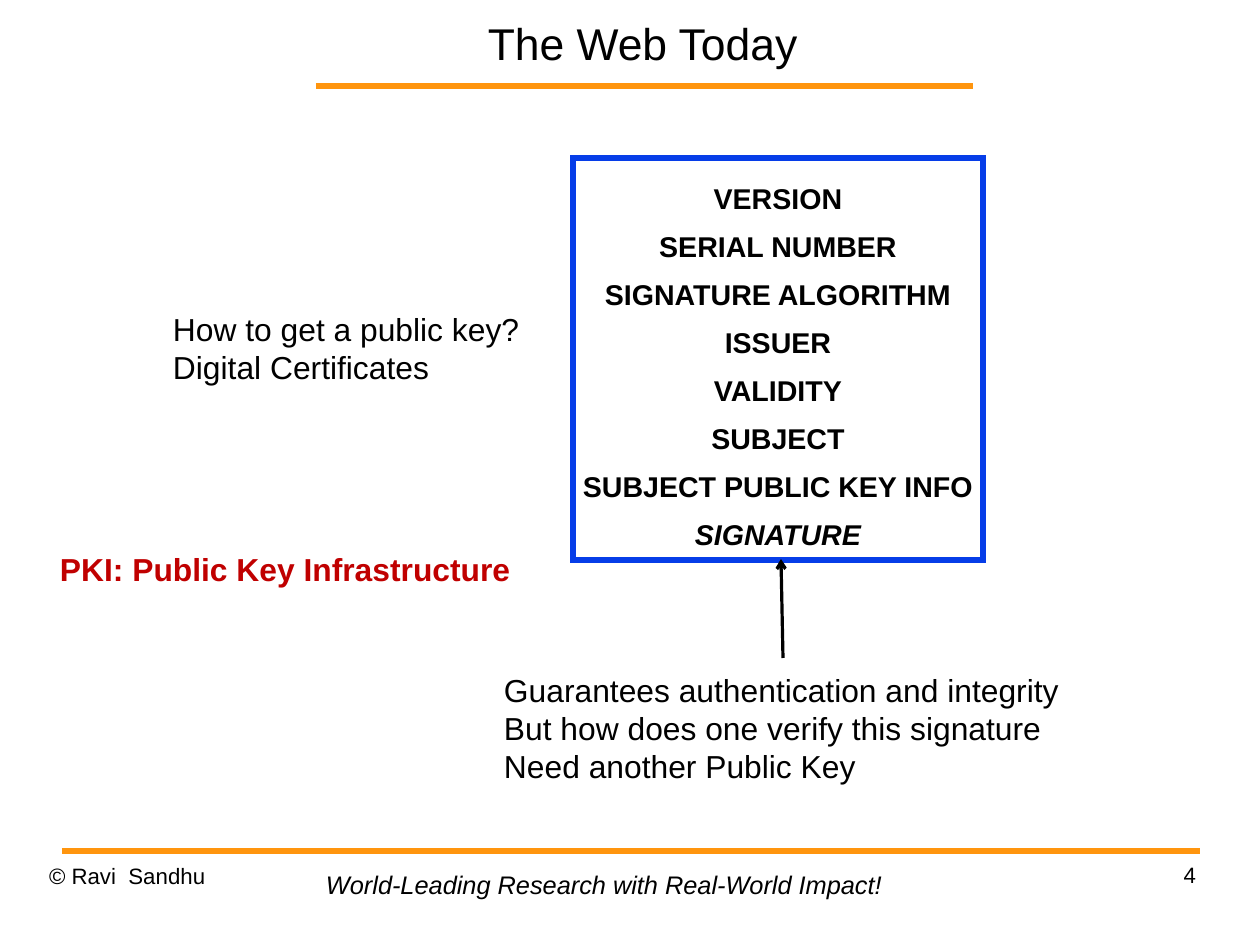
from lxml import etree
from pptx import Presentation
from pptx.dml.color import RGBColor
from pptx.enum.shapes import MSO_CONNECTOR, MSO_SHAPE
from pptx.enum.text import MSO_ANCHOR, MSO_AUTO_SIZE, PP_ALIGN
from pptx.oxml.ns import qn
from pptx.util import Pt

PX = 8000  # 45 px to the centimetre
SLIDE_SIZE = (1260, 945)
FONT = "Arial"
COLORS = {"text": "000000", "rule": "FF950E", "frame": "063DE8", "accent": "C00000"}
LEFT, CENTER, RIGHT = PP_ALIGN.LEFT, PP_ALIGN.CENTER, PP_ALIGN.RIGHT
TOP, MIDDLE = MSO_ANCHOR.TOP, MSO_ANCHOR.MIDDLE
NO_MARGINS, BOX_MARGINS = (0, 0, 0, 0), (11, 6, 11, 6)

# Start, end, colour, width in points, arrowhead at the end
RULES = [
    ((316, 86), (973, 86), "rule", 4.31, False),
    ((62, 851), (1200, 851), "rule", 4.31, False),
]
SIGNATURE_ARROW = ((783, 658), (781, 559), "text", 2, True)

# Place, lines, size, alignment, anchor, line spacing
FRAMED_TEXTS = [
    ((49, 862, 294, 65), ["© Ravi  Sandhu"], 14, LEFT, TOP, 1.01),
    ((902, 861, 294, 65), ["4"], 14, RIGHT, TOP, 1.01),
    ((275, 0, 735, 86), ["The Web Today"], 28, CENTER, MIDDLE, 1),
]

# Place, lines, size, colour, bold, italic
LABELS = [
    ((315, 863, 581, 42), ["World-Leading Research with Real-World Impact!"],
     16, "text", False, True),
    ((162, 304, 373, 88), ["How to get a public key?", "Digital Certificates"],
     20, "text", False, False),
    ((493, 665, 582, 127), ["Guarantees authentication and integrity",
                            "But how does one verify this signature",
                            "Need another Public Key"],
     20, "text", False, False),
    ((49, 544, 477, 50), ["PKI: Public Key Infrastructure"],
     20, "accent", True, False),
]

CERTIFICATE_PLACE = (573, 158, 410, 402)
CERTIFICATE_FIELDS = [
    "VERSION", "SERIAL NUMBER", "SIGNATURE ALGORITHM", "ISSUER", "VALIDITY",
    "SUBJECT", "SUBJECT PUBLIC KEY INFO", "SIGNATURE",
]


def emu(lengths):
    return [length * PX for length in lengths]


def color(name):
    return RGBColor.from_string(COLORS[name])


def write(shape, lines, size, align=LEFT, anchor=TOP, spacing=1, margins=BOX_MARGINS,
          wrap=False, fill="text", bold=False, italic=False):
    frame = shape.text_frame
    frame.text = "\n".join(lines)
    frame.word_wrap = wrap
    frame.vertical_anchor = anchor
    (frame.margin_left, frame.margin_top,
     frame.margin_right, frame.margin_bottom) = emu(margins)
    for para in frame.paragraphs:
        para.alignment = align
        para.line_spacing = spacing
        for span in para.runs:
            span.font.name = FONT
            span.font.size = Pt(size)
            span.font.bold = bold
            span.font.italic = italic
            span.font.color.rgb = color(fill)
    return frame


def add_line(page, start, end, stroke, width, arrow):
    line = page.shapes.add_connector(MSO_CONNECTOR.STRAIGHT, *emu(start + end))
    line.line.color.rgb = color(stroke)
    line.line.width = Pt(width)
    properties = line._element.spPr
    if arrow:
        etree.SubElement(properties.find(qn("a:ln")), qn("a:tailEnd"), type="arrow")
    etree.SubElement(properties, qn("a:effectLst"))


def add_certificate(page):
    box = page.shapes.add_shape(MSO_SHAPE.RECTANGLE, *emu(CERTIFICATE_PLACE))
    box.shadow.inherit = False
    box.fill.background()
    box.line.color.rgb = color("frame")
    box.line.width = Pt(4)
    outline = box._element.spPr.find(qn("a:ln"))
    etree.SubElement(outline, qn("a:miter"), lim="800000")
    frame = write(box, CERTIFICATE_FIELDS, 18, CENTER, MIDDLE, 1.4,
                  margins=(13, 6, 13, 6), bold=True)
    frame.paragraphs[-1].runs[0].font.italic = True


def main():
    deck = Presentation()
    deck.slide_width, deck.slide_height = emu(SLIDE_SIZE)
    page = deck.slides.add_slide(deck.slide_layouts[6])

    for rule in RULES:
        add_line(page, *rule)
    for place, lines, size, align, anchor, spacing in FRAMED_TEXTS:
        write(page.shapes.add_textbox(*emu(place)), lines, size, align, anchor,
              spacing, NO_MARGINS, wrap=True)
    add_certificate(page)
    add_line(page, *SIGNATURE_ARROW)
    for place, lines, size, fill, bold, italic in LABELS:
        frame = write(page.shapes.add_textbox(*emu(place)), lines, size,
                      fill=fill, bold=bold, italic=italic)
        frame.auto_size = MSO_AUTO_SIZE.SHAPE_TO_FIT_TEXT

    deck.save("out.pptx")


if __name__ == "__main__":
    main()
